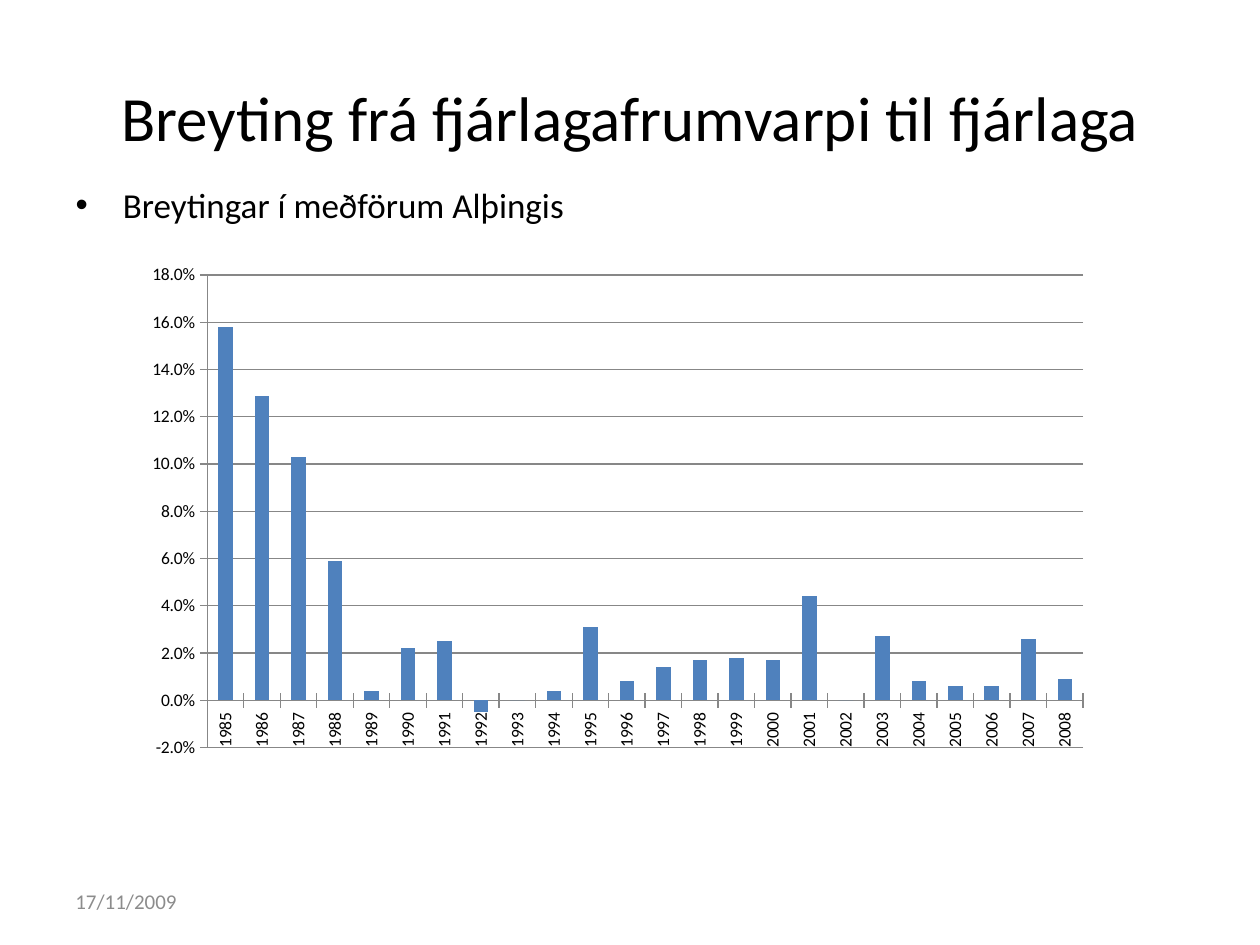
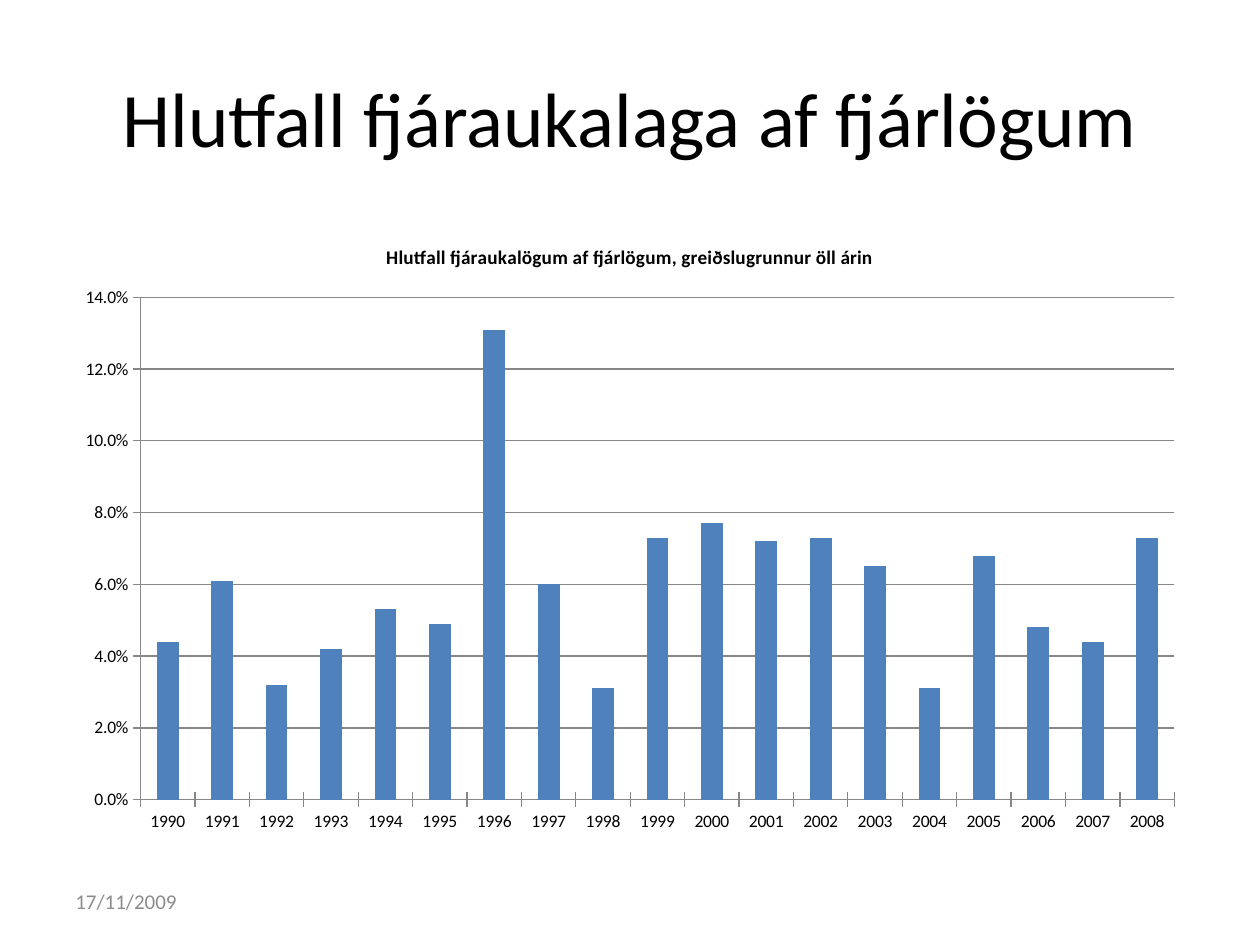
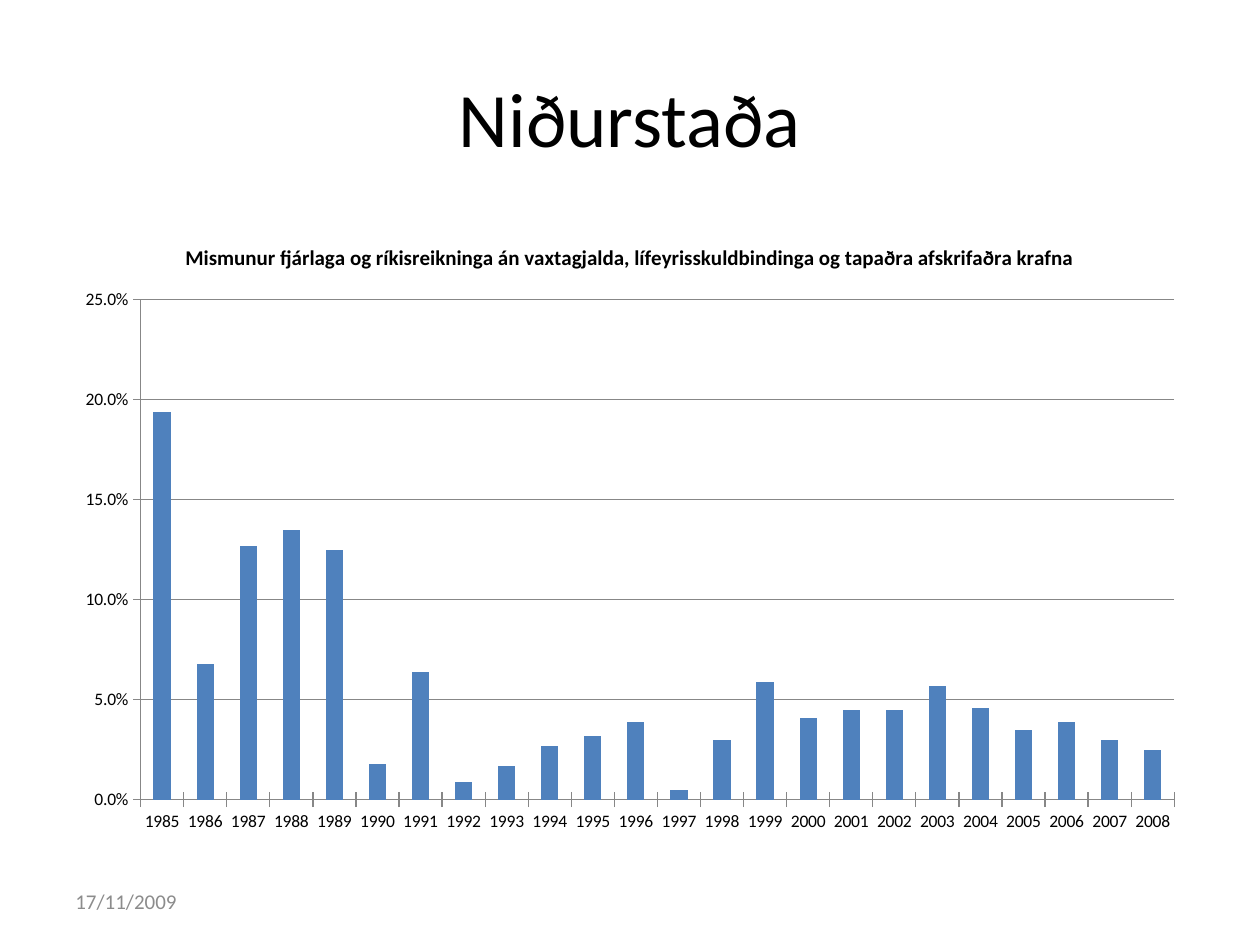
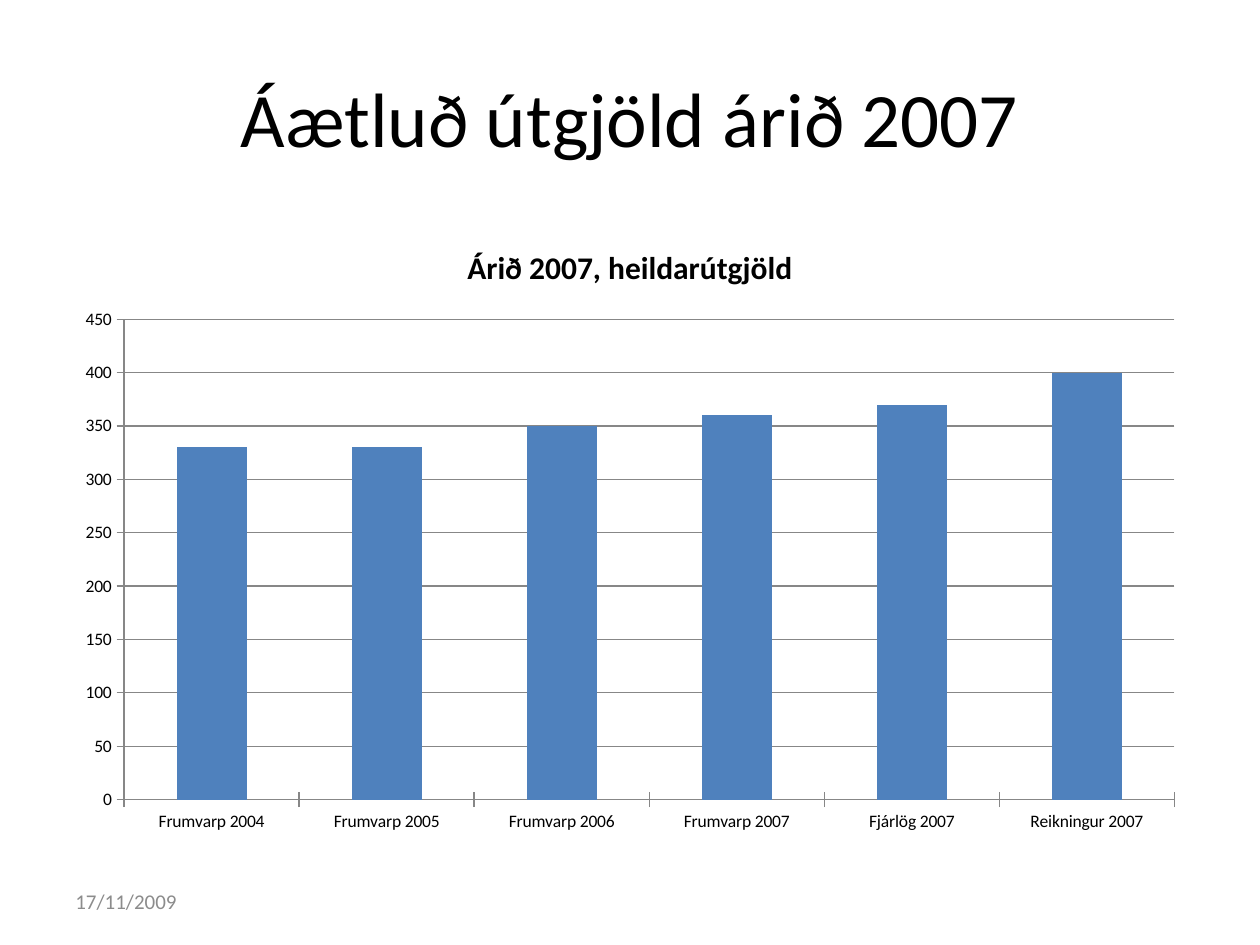
from dataclasses import dataclass

from lxml.etree import SubElement
from pptx import Presentation
from pptx.chart.data import CategoryChartData
from pptx.dml.color import RGBColor
from pptx.enum.chart import XL_CHART_TYPE, XL_TICK_MARK
from pptx.enum.text import MSO_ANCHOR, MSO_AUTO_SIZE, PP_ALIGN
from pptx.oxml.ns import qn
from pptx.util import Cm, Pt


@dataclass(frozen=True)
class Theme:
    face: str = "Calibri"
    ink: RGBColor = RGBColor(0, 0, 0)
    muted: RGBColor = RGBColor(0x8C, 0x8C, 0x8C)
    line: RGBColor = RGBColor(0x87, 0x87, 0x87)
    bar: RGBColor = RGBColor(0x4F, 0x81, 0xBD)
    head: int = 44
    body: int = 20
    date: int = 12
    label: int = 10


THEME = Theme()
HEAD_BOX = (1.27, 0.76, 22.86, 3.18)
BODY_BOX = (1.27, 3.58, 22.86, 13.44)
DATE_BOX = (1.27, 17.65, 5.92, 1.02)
CHART_BOX = (1.27, 4.45, 22.86, 12.57)
SMALL_BOX = (2.59, 4.95, 19.84, 11.91)
DATE = "17/11/2009"
PERCENT = "0.0%"


def set_all(target, values):
    for name, value in values.items():
        setattr(target, name, value)


def style(font, size, color=THEME.ink, bold=False):
    set_all(font, {"name": THEME.face, "size": Pt(size), "bold": bold})
    font.color.rgb = color


def place(shape, box):
    names = ("left", "top", "width", "height")
    set_all(shape, dict(zip(names, map(Cm, box))))


def write(shape, text, size, color=THEME.ink, anchor=MSO_ANCHOR.MIDDLE, align=PP_ALIGN.LEFT):
    frame = shape.text_frame
    frame.text = text
    set_all(frame, {"word_wrap": True, "auto_size": MSO_AUTO_SIZE.NONE,
                    "vertical_anchor": anchor})
    para = frame.paragraphs[0]
    set_all(para, {"alignment": align, "space_before": Pt(0)})
    style(para.runs[0].font, size, color)


def add_slide(deck, title, size=THEME.head, point=None):
    """Add a slide with its title, date and, if given, one bullet point."""
    slide = deck.slides.add_slide(deck.slide_layouts[1 if point else 5])
    head = slide.shapes.title
    place(head, HEAD_BOX)
    write(head, title, size, align=PP_ALIGN.CENTER)
    if point:
        body = slide.placeholders[1]
        place(body, BODY_BOX)
        write(body, point, THEME.body, anchor=MSO_ANCHOR.TOP)
    date = slide.shapes.add_textbox(*map(Cm, DATE_BOX))
    write(date, DATE, THEME.date, THEME.muted)
    return slide


def draw_line(line):
    line.width = Pt(0.75)
    line.color.rgb = THEME.line


def add_bars(slide, cats, values, scale, form=PERCENT, box=CHART_BOX,
             title=None, size=18, name="Series 1"):
    """Add a column chart; scale is the value axis as (low, high, step)."""
    data = CategoryChartData()
    data.categories = [str(cat) for cat in cats]
    data.add_series(name, values)
    chart = slide.shapes.add_chart(
        XL_CHART_TYPE.COLUMN_CLUSTERED, *map(Cm, box), data).chart
    style(chart.font, THEME.label)
    set_all(chart, {"has_legend": False, "has_title": bool(title)})
    if title:
        frame = chart.chart_title.text_frame
        frame.text = title
        style(frame.paragraphs[0].runs[0].font, size, bold=True)
        chart.chart_title.include_in_layout = False

    plot = chart.plots[0]
    set_all(plot, {"vary_by_categories": False, "gap_width": 150})
    fill = plot.series[0].format.fill
    fill.solid()
    fill.fore_color.rgb = THEME.bar

    for axis in (chart.category_axis, chart.value_axis):
        axis.major_tick_mark = XL_TICK_MARK.CROSS
        draw_line(axis.format.line)
        style(axis.tick_labels.font, THEME.label)
    axis = chart.value_axis
    low, high, step = scale
    set_all(axis, {"minimum_scale": low, "maximum_scale": high,
                   "major_unit": step, "has_major_gridlines": True})
    draw_line(axis.major_gridlines.format.line)
    set_all(axis.tick_labels, {"number_format": form,
                               "number_format_is_linked": False})
    return chart


def fix_plot(chart, x, y, w, h):
    """Set the inner plot area as fractions of the chart."""
    area = chart._chartSpace.chart.plotArea
    for old in area.findall(qn("c:layout")):
        area.remove(old)
    layout = SubElement(area, qn("c:layout"))
    area.insert(0, layout)
    manual = SubElement(layout, qn("c:manualLayout"))
    parts = {"layoutTarget": "inner", "xMode": "edge", "yMode": "edge",
             "x": x, "y": y, "w": w, "h": h}
    for tag, value in parts.items():
        SubElement(manual, qn(f"c:{tag}")).set("val", str(value))


def turn_labels(axis):
    axis._element.txPr.bodyPr.set("rot", "-5400000")


def main():
    deck = Presentation()
    set_all(deck, {"slide_width": Cm(25.4), "slide_height": Cm(19.05)})

    slide = add_slide(deck, "Breyting frá fjárlagafrumvarpi til fjárlaga", 36,
                      "Breytingar í meðförum Alþingis")
    change = [0.158, 0.129, 0.103, 0.059, 0.004, 0.022, 0.025, -0.005,
              0, 0.004, 0.031, 0.008, 0.014, 0.017, 0.018, 0.017,
              0.044, 0, 0.027, 0.008, 0.006, 0.006, 0.026, 0.009]
    chart = add_bars(slide, range(1985, 2009), change, (-0.02, 0.18, 0.02),
                     box=SMALL_BOX)
    fix_plot(chart, 0.08, 0.05, 0.89, 0.8)
    turn_labels(chart.category_axis)

    slide = add_slide(deck, "Hlutfall fjáraukalaga af fjárlögum")
    share = [0.044, 0.061, 0.032, 0.042, 0.053, 0.049, 0.131, 0.06, 0.031, 0.073,
             0.077, 0.072, 0.073, 0.065, 0.031, 0.068, 0.048, 0.044, 0.073]
    title = "Hlutfall fjáraukalögum af fjárlögum, greiðslugrunnur öll árin"
    add_bars(slide, range(1990, 2009), share, (0, 0.14, 0.02),
             title=title, size=11, name=title)

    slide = add_slide(deck, "Niðurstaða")
    gap = [0.194, 0.068, 0.127, 0.135, 0.125, 0.018, 0.064, 0.009,
           0.017, 0.027, 0.032, 0.039, 0.005, 0.03, 0.059, 0.041,
           0.045, 0.045, 0.057, 0.046, 0.035, 0.039, 0.03, 0.025]
    add_bars(slide, range(1985, 2009), gap, (0, 0.25, 0.05), size=12,
             title="Mismunur fjárlaga og ríkisreikninga án vaxtagjalda, "
                   "lífeyrisskuldbindinga og tapaðra afskrifaðra krafna")

    slide = add_slide(deck, "Áætluð útgjöld árið 2007")
    stages = [f"Frumvarp {year}" for year in range(2004, 2008)]
    stages += ["Fjárlög 2007", "Reikningur 2007"]
    add_bars(slide, stages, [330, 330, 350, 360, 370, 400], (0, 450, 50),
             form="General", title="Árið 2007, heildarútgjöld")

    deck.save("out.pptx")


if __name__ == "__main__":
    main()
